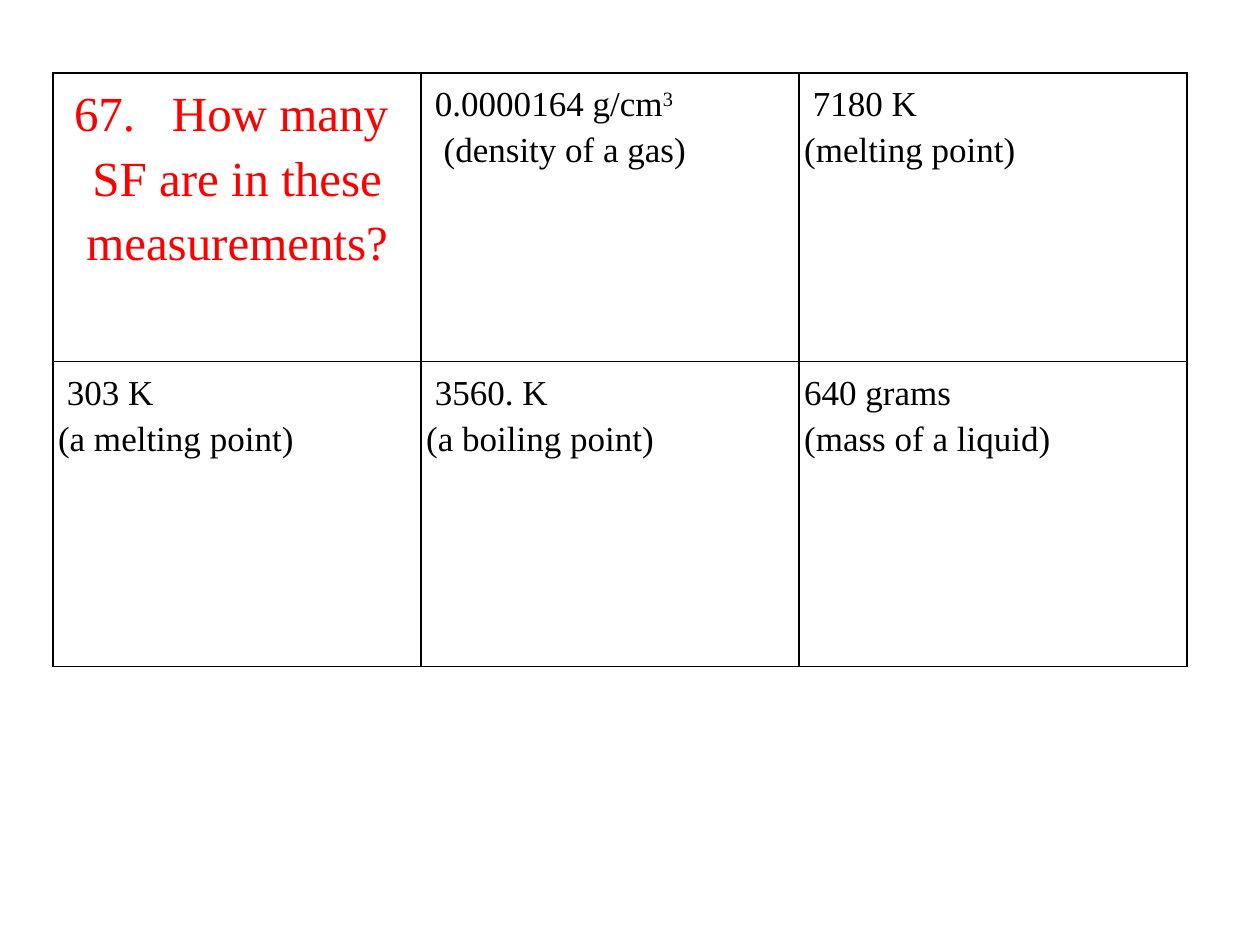
from dataclasses import dataclass

from lxml import etree
from pptx import Presentation
from pptx.dml.color import RGBColor
from pptx.enum.text import PP_ALIGN
from pptx.oxml.ns import qn
from pptx.util import Cm, Pt

LEFT = PP_ALIGN.LEFT
CENTER = PP_ALIGN.CENTER
BLANK_LAYOUT = 6


@dataclass(frozen=True)
class Theme:
    font: str = "Times New Roman"
    question_color: str = "FF0000"
    answer_color: str = "000000"
    border_color: str = "000000"
    cell_color: str = "FFFFFF"
    question_size: int = 28
    answer_size: int = 20
    border_width: int = 1


WIDE_SPACE = {"spc": "1400"}
SUPERSCRIPT = {"baseline": "30000"}
FIRST_LINE = {"marL": "0", "indent": str(Pt(5))}
STEPPED = {"marL": str(Pt(10)), "indent": str(-Pt(5))}

QUESTION = [
    [("67.", {}), (" ", WIDE_SPACE), ("How many ", {})],
    [("SF are in these measurements?", {})],
]
DENSITY = [
    [("0.0000164 g/cm", {}), ("3", SUPERSCRIPT)],
    [("(density of a gas)", {})],
]
COLUMN_WIDTHS = [7.42, 7.62, 7.82]
ROW_HEIGHTS = [5.82, 6.15]


def plain(*lines):
    return [[(line, {})] for line in lines]


class SlideBuilder:
    """Draws elements on the current slide in one theme."""

    def __init__(self, deck, theme):
        self.theme = theme
        self.page = deck.slides.add_slide(deck.slide_layouts[BLANK_LAYOUT])

    def table(self, left, top, widths, heights):
        frame = self.page.shapes.add_table(
            len(heights), len(widths), Cm(left), Cm(top),
            Cm(sum(widths)), Cm(sum(heights)))
        table = frame.table
        table.first_row = table.horz_banding = False
        for column, width in zip(table.columns, widths):
            column.width = Cm(width)
        for row, height in zip(table.rows, heights):
            row.height = Cm(height)
        for cell in table.iter_cells():
            self.cell_style(cell)
        return table

    def cell_style(self, cell):
        properties = cell._tc.get_or_add_tcPr()
        for side in ("lnL", "lnR", "lnT", "lnB"):
            line = etree.SubElement(properties, qn(f"a:{side}"),
                                    w=str(Pt(self.theme.border_width)))
            fill = etree.SubElement(line, qn("a:solidFill"))
            etree.SubElement(fill, qn("a:srgbClr"), val=self.theme.border_color)
        cell.fill.solid()
        cell.fill.fore_color.rgb = RGBColor.from_string(self.theme.cell_color)
        for side in ("left", "right", "top", "bottom"):
            setattr(cell, f"margin_{side}", Cm(0.1))

    def cell_text(self, cell, lines, size, color, align=LEFT, indent=None):
        para = cell.text_frame.paragraphs[0]
        layout = {"alignment": align, "line_spacing": 1.19, "space_after": Pt(6)}
        for name, value in layout.items():
            setattr(para, name, value)
        for name, value in (indent or {}).items():
            para._p.get_or_add_pPr().set(name, value)
        for number, line in enumerate(lines):
            if number:
                para.add_line_break()
            for text, extras in line:
                self.span(para, text, size, color, extras)

    def span(self, para, text, size, color, extras):
        span = para.add_run()
        span.text = text
        style = {"name": self.theme.font, "size": Pt(size), "bold": False}
        for name, value in style.items():
            setattr(span.font, name, value)
        span.font.color.rgb = RGBColor.from_string(color)
        for name, value in extras.items():
            span._r.get_or_add_rPr().set(name, value)


def main():
    deck = Presentation()
    deck.slide_width, deck.slide_height = Cm(25.4), Cm(19.05)
    theme = Theme()
    builder = SlideBuilder(deck, theme)
    table = builder.table(1.07, 1.47, COLUMN_WIDTHS, ROW_HEIGHTS)
    builder.cell_text(table.cell(0, 0), QUESTION, theme.question_size,
                      theme.question_color, CENTER)
    answers = {
        (0, 1): (DENSITY, STEPPED),
        (0, 2): (plain("7180 K", "(melting point)"), FIRST_LINE),
        (1, 0): (plain("303 K", "(a melting point)"), FIRST_LINE),
        (1, 1): (plain("3560. K", "(a boiling point)"), FIRST_LINE),
        (1, 2): (plain("640 grams", "(mass of a liquid)"), None),
    }
    for position, (lines, indent) in answers.items():
        builder.cell_text(table.cell(*position), lines, theme.answer_size,
                          theme.answer_color, indent=indent)
    deck.save("out.pptx")


if __name__ == "__main__":
    main()
